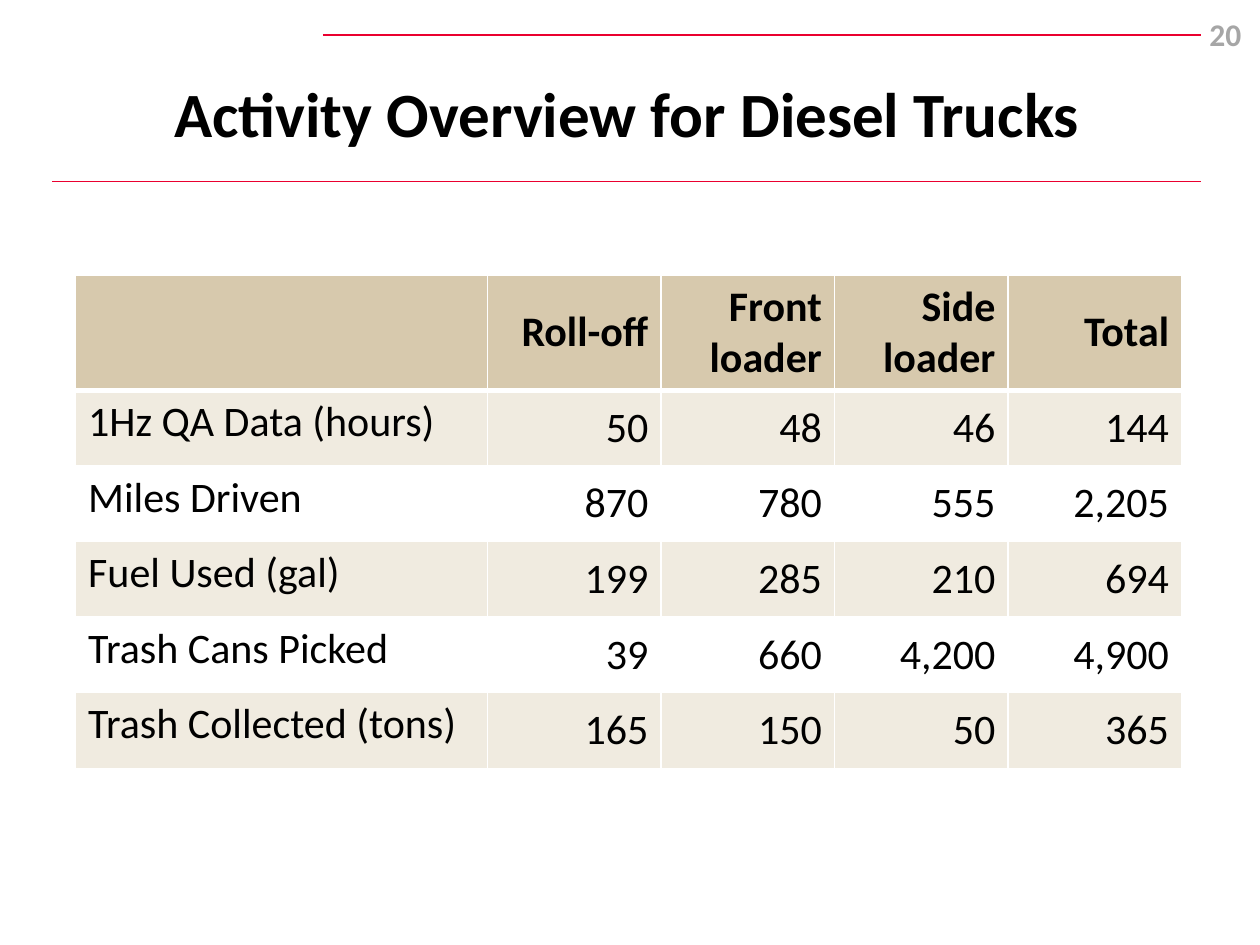
from dataclasses import dataclass

from pptx import Presentation
from pptx.dml.color import RGBColor
from pptx.enum.shapes import MSO_CONNECTOR as Connector
from pptx.enum.text import MSO_ANCHOR as Anchor, MSO_AUTO_SIZE as AutoSize, PP_ALIGN as Align
from pptx.oxml.ns import qn
from pptx.slide import Slide
from pptx.table import _Cell as Cell
from pptx.text.text import TextFrame
from pptx.util import Pt
from lxml.etree import SubElement


@dataclass(frozen=True)
class Theme:
    font: str = "Calibri"
    text: str = "000000"
    rule: str = "EA002F"
    number: str = "A6A6A6"
    header: str = "D7C9AD"
    band: str = "F0EBE0"
    border: str = "FFFFFF"
    title_size: float = 36
    table_size: float = 24
    number_size: float = 18


@dataclass(frozen=True)
class Rule:
    left: float
    right: float
    top: float


THEME = Theme()
RULES = [Rule(184.5, 686.5, 20), Rule(30, 686.5, 103.75)]
COLUMN_WIDTHS = [235.3] + [99.2] * 4
HEADER_HEIGHT, ROW_HEIGHT = 64.8, 43.2
ROWS = [
    ("", "Roll-off", "Front\nloader", "Side\nloader", "Total"),
    ("1Hz QA Data (hours)", "50", "48", "46", "144"),
    ("Miles Driven", "870", "780", "555", "2,205"),
    ("Fuel Used (gal)", "199", "285", "210", "694"),
    ("Trash Cans Picked", "39", "660", "4,200", "4,900"),
    ("Trash Collected (tons)", "165", "150", "50", "365"),
]


def set_text(frame: TextFrame, text: str, size: float, color: str,
             align: Align, bold: bool) -> None:
    frame.text = text
    for paragraph in frame.paragraphs:
        paragraph.alignment = align
        paragraph.font.size = Pt(size)
        for run in paragraph.runs:
            run.font.name = THEME.font
            run.font.size = Pt(size)
            run.font.bold = bold
            run.font.color.rgb = RGBColor.from_string(color)


def set_margins(frame: TextFrame, left: float, top: float, right: float) -> None:
    frame.margin_left, frame.margin_right = Pt(left), Pt(right)
    frame.margin_top = frame.margin_bottom = Pt(top)
    frame.word_wrap = True
    frame.auto_size = AutoSize.NONE


def draw_rule(slide: Slide, rule: Rule) -> None:
    line = slide.shapes.add_connector(
        Connector.STRAIGHT, Pt(rule.left), Pt(rule.top), Pt(rule.right), Pt(rule.top))
    line.line.color.rgb = RGBColor.from_string(THEME.rule)
    line.line.width = Pt(1)
    SubElement(line._element.spPr, qn("a:effectLst"))


def draw_number(slide: Slide, number: str) -> None:
    box = slide.shapes.add_textbox(Pt(686.5), Pt(5), Pt(30), Pt(29))
    set_margins(box.text_frame, 0, 3.6, 7.2)
    set_text(box.text_frame, number, THEME.number_size, THEME.number, Align.RIGHT, True)


def draw_title(slide: Slide, text: str) -> None:
    title = slide.shapes.title
    title.left, title.top, title.width, title.height = Pt(30), Pt(40.5), Pt(656.5), Pt(47.5)
    set_margins(title.text_frame, 5, 2.2, 5)
    title.text_frame.vertical_anchor = Anchor.MIDDLE
    set_text(title.text_frame, text, THEME.title_size, THEME.text, Align.CENTER, True)


def set_borders(cell: Cell, top: float, bottom: float) -> None:
    properties = cell._tc.get_or_add_tcPr()
    for side, width in (("L", 1), ("R", 1), ("T", top), ("B", bottom)):
        line = SubElement(properties, qn(f"a:ln{side}"), w=str(Pt(width)))
        fill = SubElement(line, qn("a:solidFill"))
        SubElement(fill, qn("a:srgbClr"), val=THEME.border)


def draw_table(slide: Slide) -> None:
    heights = [HEADER_HEIGHT] + [ROW_HEIGHT] * (len(ROWS) - 1)
    table = slide.shapes.add_table(
        len(ROWS), len(COLUMN_WIDTHS), Pt(43.2), Pt(157.2),
        Pt(sum(COLUMN_WIDTHS)), Pt(sum(heights))).table
    for column, width in zip(table.columns, COLUMN_WIDTHS):
        column.width = Pt(width)

    for row_index, values in enumerate(ROWS):
        is_header = row_index == 0
        table.rows[row_index].height = Pt(heights[row_index])
        for column_index, value in enumerate(values):
            cell = table.cell(row_index, column_index)
            is_label = column_index == 0
            set_text(cell.text_frame, value, THEME.table_size, THEME.text,
                     Align.LEFT if is_label else Align.RIGHT, is_header)
            cell.vertical_anchor = Anchor.TOP if is_label else Anchor.MIDDLE
            set_borders(cell, 3 if row_index == 1 else 1, 3 if is_header else 1)
            # Header colour, then alternating bands
            if is_header or row_index % 2:
                cell.fill.solid()
                cell.fill.fore_color.rgb = RGBColor.from_string(
                    THEME.header if is_header else THEME.band)
            else:
                cell.fill.background()


def main() -> None:
    presentation = Presentation()
    presentation.slide_width, presentation.slide_height = Pt(720), Pt(540)
    slide = presentation.slides.add_slide(presentation.slide_layouts[5])

    # Heading area
    for rule in RULES:
        draw_rule(slide, rule)
    draw_number(slide, "20")
    draw_title(slide, "Activity Overview for Diesel Trucks")

    # Activity figures
    draw_table(slide)
    presentation.save("out.pptx")


if __name__ == "__main__":
    main()
